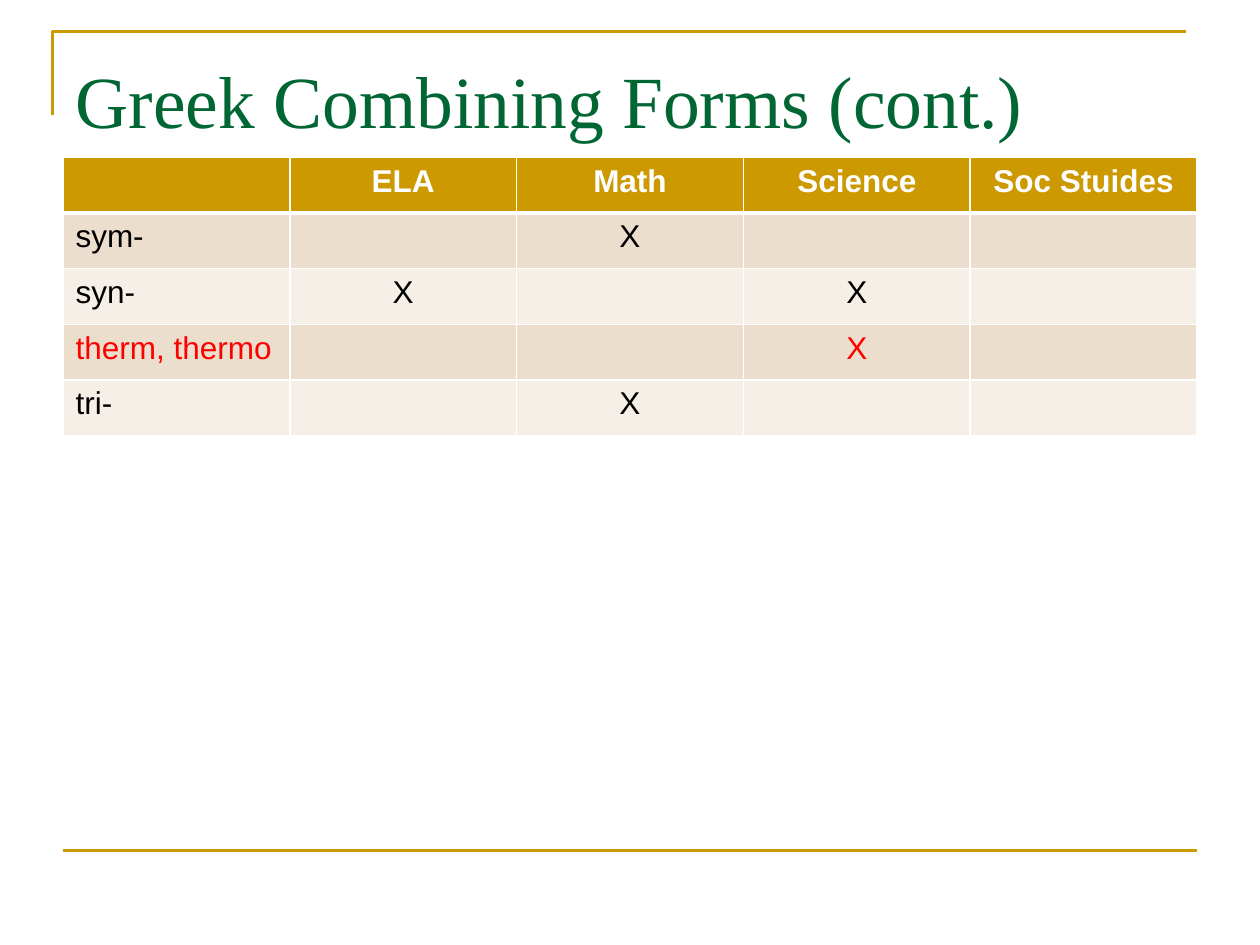
from lxml import etree
from pptx import Presentation
from pptx import util as u
from pptx.dml.color import RGBColor
from pptx.enum import shapes, text
from pptx.oxml import ns

# Content
TITLE = "Greek Combining Forms (cont.)"
SUBJECTS = ["ELA", "Math", "Science", "Soc Stuides"]
FORMS = [  # form, subjects that use it, text colour
    ("sym-", ["Math"], "ink"),
    ("syn-", ["ELA", "Science"], "ink"),
    ("therm, thermo", ["Science"], "accent"),
    ("tri-", ["Math"], "ink"),
]
COLORS = {"gold": "CC9900", "green": "006633", "white": "FFFFFF", "ink": "000000",
          "accent": "FF0000", "odd": "ECDECC", "even": "F6EFE7"}

# Layout, in points
SLIDE_W, SLIDE_H = 720, 540
LEFT, WIDTH = 36, 648
TABLE_TOP, ROW_H = 90, 31.8
CORNER = [(30, 66), (30, 18), (678, 18)]
RULE_Y = 486


def color(name):
    return RGBColor.from_string(COLORS[name])


def add_span(para, words, font, size, ink, bold=False):
    span = para.add_run()
    span.text = words
    span.font.name, span.font.size, span.font.bold = font, u.Pt(size), bold
    span.font.color.rgb = color(ink)


def set_borders(cell, bottom):
    props = cell._tc.get_or_add_tcPr()
    widths = [("lnL", 1), ("lnR", 1), ("lnT", 1), ("lnB", bottom)]
    for place, (tag, width) in enumerate(widths):
        line = etree.Element(ns.qn(f"a:{tag}"), w=str(int(u.Pt(width))))
        fill = etree.SubElement(line, ns.qn("a:solidFill"))
        etree.SubElement(fill, ns.qn("a:srgbClr"), val=COLORS["white"])
        props.insert(place, line)


def fill_cell(cell, words, fill, ink, centered, header):
    cell.fill.solid()
    cell.fill.fore_color.rgb = color(fill)
    set_borders(cell, 3 if header else 1)
    para = cell.text_frame.paragraphs[0]
    para.alignment = text.PP_ALIGN.CENTER if centered else text.PP_ALIGN.LEFT
    if words:
        add_span(para, words, "Arial", 18, ink, header)
    else:
        para.font.size = u.Pt(18)


def add_frame(page):
    # Corner line around the title
    builder = page.shapes.build_freeform(*map(u.Pt, CORNER[0]))
    builder.add_line_segments([(u.Pt(x), u.Pt(y)) for x, y in CORNER[1:]], close=False)
    corner = builder.convert_to_shape()
    corner.shadow.inherit = False
    corner.fill.background()
    # Rule at the foot
    rule = page.shapes.add_connector(shapes.MSO_CONNECTOR.STRAIGHT, u.Pt(LEFT), u.Pt(RULE_Y),
                                     u.Pt(LEFT + WIDTH), u.Pt(RULE_Y))
    etree.SubElement(rule._element.spPr, ns.qn("a:effectLst"))
    for shape in (corner, rule):
        shape.line.color.rgb = color("gold")
        shape.line.width = u.Pt(1.5)


def add_title(page):
    box = page.shapes.title
    box.left, box.top, box.width, box.height = map(u.Pt, (LEFT, 21.6, WIDTH, 90))
    frame = box.text_frame
    frame.word_wrap = True
    frame.auto_size = text.MSO_AUTO_SIZE.NONE
    frame.vertical_anchor = text.MSO_ANCHOR.TOP
    frame.margin_top = u.Pt(9.6)
    para = frame.paragraphs[0]
    para.alignment = text.PP_ALIGN.LEFT
    add_span(para, TITLE, "Times New Roman", 42, "green")


def add_forms_table(page):
    rows = [([""] + SUBJECTS, "white")]
    for form, used, ink in FORMS:
        rows.append(([form] + ["X" if name in used else "" for name in SUBJECTS], ink))
    table = page.shapes.add_table(len(rows), len(rows[0][0]), u.Pt(LEFT), u.Pt(TABLE_TOP),
                                  u.Pt(WIDTH), u.Pt(ROW_H * len(rows))).table
    for r, (words, ink) in enumerate(rows):
        table.rows[r].height = u.Pt(ROW_H)
        fill = "gold" if r == 0 else "odd" if r % 2 else "even"
        for c, word in enumerate(words):
            fill_cell(table.cell(r, c), word, fill, ink, c > 0, r == 0)


def main():
    deck = Presentation()
    deck.slide_width, deck.slide_height = u.Pt(SLIDE_W), u.Pt(SLIDE_H)
    page = deck.slides.add_slide(deck.slide_layouts[5])
    add_frame(page)
    add_title(page)
    add_forms_table(page)
    deck.save("out.pptx")


if __name__ == "__main__":
    main()
